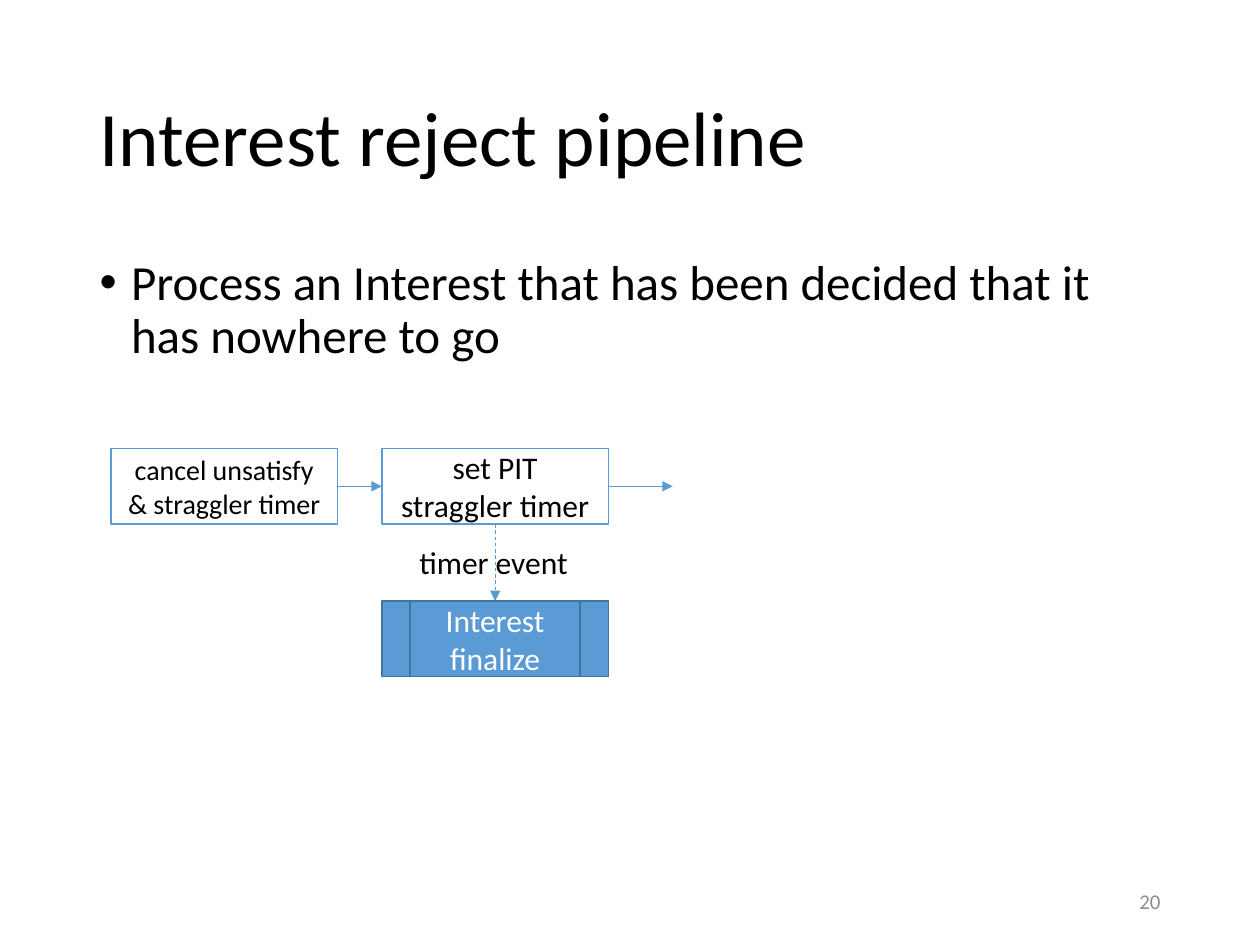
"""Build the slide on the Interest reject pipeline with its timer flow."""
from lxml import etree
from pptx import Presentation, util as u
from pptx.dml.color import RGBColor
from pptx.enum import dml, shapes, text
from pptx.oxml import ns

COLORS = {"black": "000000", "white": "FFFFFF", "blue": "5B9BD5",
          "edge": "43739E", "gray": "8C8C8C"}
BOX_WIDTH, BOX_HEIGHT = 1.8, 0.6
COLUMNS = [0.88, 3.03]
ROWS = [3.56, 4.77]
MIDDLE = ROWS[0] + BOX_HEIGHT / 2
CENTER = COLUMNS[1] + BOX_WIDTH / 2


def write(shape, words, size=18, color="black", align=text.PP_ALIGN.LEFT,
          anchor=text.MSO_ANCHOR.MIDDLE, spacing=1.0, before=0, wrap=True):
    frame = shape.text_frame
    frame.auto_size = text.MSO_AUTO_SIZE.NONE
    frame.word_wrap = wrap
    frame.vertical_anchor = anchor
    paragraph = frame.paragraphs[0]
    paragraph.alignment = align
    paragraph.line_spacing = spacing
    paragraph.space_before = u.Pt(before)
    run = paragraph.add_run()
    run.text = words
    run.font.name = "Calibri"
    run.font.size = u.Pt(size)
    run.font.color.rgb = RGBColor.from_string(COLORS[color])
    return paragraph


def place(*lengths):
    return [u.Inches(length) for length in lengths]


presentation = Presentation()
presentation.slide_width, presentation.slide_height = place(10, 7.5)
slide = presentation.slides.add_slide(presentation.slide_layouts[1])

title, body = slide.placeholders
for shape, top, height in [(title, 0.4, 1.45), (body, 2, 4.76)]:
    shape.left, shape.top, shape.width, shape.height = place(0.69, top, 8.62, height)
write(title, "Interest reject pipeline", size=44, spacing=0.9)
paragraph = write(body, "Process an Interest that has been decided that it has nowhere to go",
                  size=28, anchor=text.MSO_ANCHOR.TOP, spacing=0.9, before=10)
properties = paragraph._p.get_or_add_pPr()
properties.set("marL", str(u.Inches(0.25)))
properties.set("indent", str(u.Inches(-0.25)))
etree.SubElement(properties, ns.qn("a:buFont"), typeface="Arial")
etree.SubElement(properties, ns.qn("a:buChar"), char="•")

number = slide.shapes.add_textbox(*place(7.06, 6.95, 2.25, 0.4))
write(number, "20", size=12, color="gray", align=text.PP_ALIGN.RIGHT)

arrows = [
    (COLUMNS[0] + BOX_WIDTH, MIDDLE, COLUMNS[1], MIDDLE, False),
    (COLUMNS[1] + BOX_WIDTH, MIDDLE, 5.34, MIDDLE, False),
    (CENTER, ROWS[0] + BOX_HEIGHT, CENTER, ROWS[1], True),
]
for *ends, dashed in arrows:
    arrow = slide.shapes.add_connector(shapes.MSO_CONNECTOR.STRAIGHT, *place(*ends))
    arrow.line.color.rgb = RGBColor.from_string(COLORS["blue"])
    arrow.line.width = u.Pt(0.5)
    if dashed:
        arrow.line.dash_style = dml.MSO_LINE.DASH
    etree.SubElement(arrow.line._get_or_add_ln(), ns.qn("a:tailEnd"), type="triangle")
    etree.SubElement(arrow._element.spPr, ns.qn("a:effectLst"))

label = slide.shapes.add_textbox(*place(CENTER - 0.7, 4.26, 1.4, 0.4))
write(label, "timer event", anchor=text.MSO_ANCHOR.TOP, wrap=False)

RECTANGLE = shapes.MSO_SHAPE.RECTANGLE
PROCESS = shapes.MSO_SHAPE.FLOWCHART_PREDEFINED_PROCESS
boxes = [
    (RECTANGLE, 0, 0, "cancel unsatisfy & straggler timer", 16, "white", "blue", "black"),
    (RECTANGLE, 1, 0, "set PIT straggler timer", 18, "white", "blue", "black"),
    (PROCESS, 1, 1, "Interest finalize", 18, "blue", "edge", "white"),
]
for kind, column, row, words, size, fill, line, color in boxes:
    box = slide.shapes.add_shape(
        kind, *place(COLUMNS[column], ROWS[row], BOX_WIDTH, BOX_HEIGHT))
    box.shadow.inherit = False
    box.fill.solid()
    box.fill.fore_color.rgb = RGBColor.from_string(COLORS[fill])
    box.line.color.rgb = RGBColor.from_string(COLORS[line])
    box.line.width = u.Pt(1)
    write(box, words, size=size, color=color, align=text.PP_ALIGN.CENTER)

presentation.save("out.pptx")
